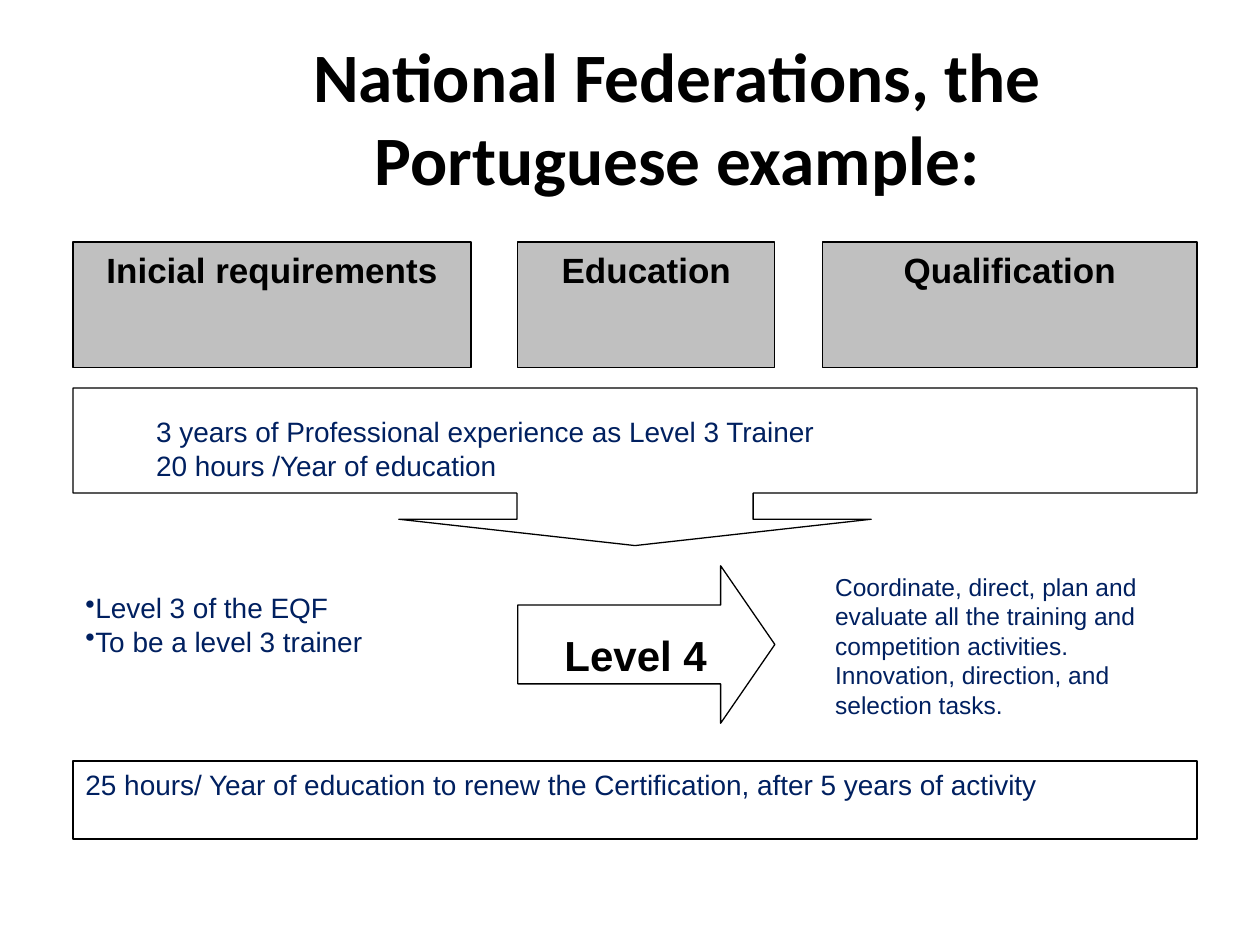
from dataclasses import dataclass
from typing import Optional

from lxml.etree import SubElement
from pptx import Presentation
from pptx.dml.color import RGBColor
from pptx.enum.shapes import MSO_SHAPE
from pptx.enum.text import MSO_ANCHOR, MSO_AUTO_SIZE, PP_ALIGN
from pptx.oxml.ns import qn
from pptx.util import Inches, Pt

BLACK, WHITE, GREY, NAVY = "000000", "FFFFFF", "C0C0C0", "002060"

# Grid: (start, length) in inches
COLUMNS = {"requirements": (0.58, 3.16), "education": (4.11, 2.04),
           "qualification": (6.53, 2.97), "all": (0.58, 8.92),
           "title": (1.25, 8.25), "experience": (1.14, 8.17), "level": (4.3, 1.49)}
ROWS = {"title": (0.3, 1.25), "heading": (1.92, 1), "callout": (3.08, 1.25),
        "experience": (3.24, 0.78), "bullets": (4.64, 1.09), "level": (4.49, 1.25),
        "level label": (4.95, 0.48), "renewal": (6.04, 0.62)}


@dataclass
class TextStyle:
    size: float
    color: str = NAVY
    bold: bool = False
    align: PP_ALIGN = PP_ALIGN.LEFT
    name: str = "Arial"
    bullet: bool = False


@dataclass
class Block:
    column: str
    row: str
    lines: tuple = ()
    style: Optional[TextStyle] = None
    fill: Optional[str] = None
    line: Optional[str] = None
    preset: Optional[MSO_SHAPE] = MSO_SHAPE.RECTANGLE  # None makes a text box
    adjustments: tuple = ()


HEADING = TextStyle(20, BLACK, True, PP_ALIGN.CENTER)
LEVEL = TextStyle(24, BLACK, True, PP_ALIGN.CENTER)
TITLE = TextStyle(39.6, BLACK, True, PP_ALIGN.CENTER, "Calibri")
BODY = TextStyle(16)
BULLETS = TextStyle(16, bullet=True)
SMALL = TextStyle(14)

HEADINGS = {"requirements": "Inicial requirements", "education": "Education",
            "qualification": "Qualification"}

BLOCKS = [
    *(Block(column, "heading", (text,), HEADING, GREY, BLACK)
      for column, text in HEADINGS.items()),
    # Experience callout and its text
    Block("all", "callout", fill=WHITE, line=BLACK,
          preset=MSO_SHAPE.DOWN_ARROW_CALLOUT, adjustments=(1.5, 1.5, 0.167, 0.667)),
    Block("experience", "experience",
          ("3 years of Professional experience as Level 3 Trainer",
           "20 hours /Year of education"), BODY, preset=None),
    # Level 4: requirements, qualification and arrow
    Block("requirements", "bullets",
          ("Level 3 of the EQF", "To be a level 3 trainer"), BULLETS, WHITE),
    Block("qualification", "level",
          ("Coordinate, direct, plan and evaluate all the training and competition "
           "activities. Innovation, direction, and selection tasks.",), SMALL, WHITE),
    Block("level", "level label", ("Level 4",), LEVEL, preset=None),
    Block("education", "level", line=BLACK,
          preset=MSO_SHAPE.RIGHT_ARROW, adjustments=(0.5, 0.344)),
    # Renewal
    Block("all", "renewal",
          ("25 hours/ Year of education to renew the Certification, "
           "after 5 years of activity",), BODY, WHITE, BLACK),
]


def rgb(value: str) -> RGBColor:
    return RGBColor.from_string(value)


def grid_cell(column: str, row: str) -> tuple:
    (left, width), (top, height) = COLUMNS[column], ROWS[row]
    return tuple(Inches(length) for length in (left, top, width, height))


def write(box, lines: tuple, style: TextStyle, anchor: MSO_ANCHOR) -> None:
    frame = box.text_frame
    frame_format = {"word_wrap": True, "auto_size": MSO_AUTO_SIZE.NONE,
                    "vertical_anchor": anchor}
    for name, value in frame_format.items():
        setattr(frame, name, value)
    font_format = {"size": Pt(style.size), "bold": style.bold, "name": style.name}
    for index, line in enumerate(lines):
        para = frame.add_paragraph() if index else frame.paragraphs[0]
        para.alignment = style.align
        if style.bullet:
            SubElement(para._p.get_or_add_pPr(), qn("a:buChar")).set("char", "•")
        span = para.add_run()
        span.text = line
        for name, value in font_format.items():
            setattr(span.font, name, value)
        span.font.color.rgb = rgb(style.color)


def draw(shapes, block: Block) -> None:
    cell = grid_cell(block.column, block.row)
    if block.preset is None:
        box = shapes.add_textbox(*cell)
    else:
        box = shapes.add_shape(block.preset, *cell)
        box.shadow.inherit = False
        for index, value in enumerate(block.adjustments):
            box.adjustments[index] = value
    if block.fill:
        box.fill.solid()
        box.fill.fore_color.rgb = rgb(block.fill)
    else:
        box.fill.background()
    if block.line:
        box.line.color.rgb = rgb(block.line)
        box.line.width = Pt(0.75)
    else:
        box.line.fill.background()
    if block.style:
        write(box, block.lines, block.style, MSO_ANCHOR.TOP)


def main() -> None:
    deck = Presentation()
    deck.slide_width, deck.slide_height = Inches(10), Inches(7.5)
    page = deck.slides.add_slide(deck.slide_layouts[5])

    # Title
    title = page.shapes.title
    title.left, title.top, title.width, title.height = grid_cell("title", "title")
    write(title, ("National Federations, the Portuguese example:",), TITLE,
          MSO_ANCHOR.MIDDLE)

    # Diagram
    diagram = page.shapes.add_group_shape()
    for block in BLOCKS:
        draw(diagram.shapes, block)
    deck.save("out.pptx")


if __name__ == "__main__":
    main()
